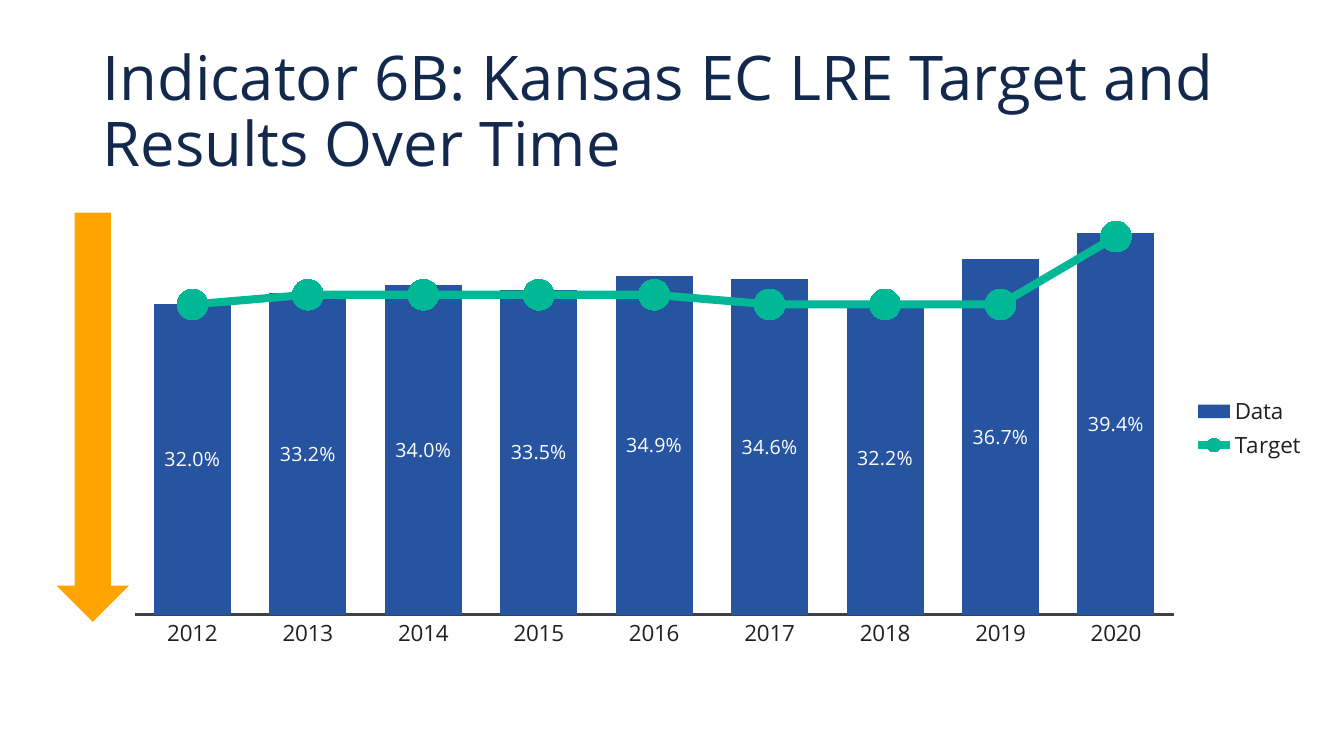
from lxml import etree
from pptx import Presentation
from pptx.chart.data import CategoryChartData
from pptx.dml.color import RGBColor
from pptx.enum.chart import (XL_CHART_TYPE, XL_LABEL_POSITION, XL_LEGEND_POSITION,
                             XL_MARKER_STYLE, XL_TICK_LABEL_POSITION, XL_TICK_MARK)
from pptx.enum.shapes import MSO_SHAPE
from pptx.enum.text import MSO_ANCHOR, PP_ALIGN
from pptx.oxml import parse_xml
from pptx.oxml.ns import nsdecls, qn
from pptx.util import Pt

NAVY = RGBColor(0x12, 0x28, 0x4C)
BLUE = RGBColor(0x26, 0x54, 0xA0)
GREEN = RGBColor(0x00, 0xB7, 0x96)
ORANGE = RGBColor(0xFF, 0xA4, 0x00)
INK = RGBColor(0x1F, 0x20, 0x22)
AXIS_GREY = RGBColor(0x3E, 0x40, 0x43)
WHITE = RGBColor(0xFF, 0xFF, 0xFF)


def format_font(font, size, color):
    font.name = "Open Sans"
    font.size = Pt(size)
    font.bold = False
    font.color.rgb = color


def write_text(frame, text, size, color, align=PP_ALIGN.LEFT,
               anchor=MSO_ANCHOR.MIDDLE, line_spacing=1.0):
    frame.word_wrap = True
    frame.vertical_anchor = anchor
    paragraph = frame.paragraphs[0]
    paragraph.alignment = align
    paragraph.line_spacing = line_spacing
    run = paragraph.add_run()
    run.text = text
    format_font(run.font, size, color)


prs = Presentation()
prs.slide_width, prs.slide_height = Pt(960), Pt(540)
slide = prs.slides.add_slide(prs.slide_layouts[5])

# Title
title = slide.shapes.title
title.left, title.top, title.width, title.height = Pt(66), Pt(28.75), Pt(828), Pt(104.4)
write_text(title.text_frame, "Indicator 6B: Kansas EC LRE Target and Results Over Time",
           size=44, color=NAVY, line_spacing=0.9)

# Chart data
results = CategoryChartData(number_format="0.0%")
results.categories = [str(year) for year in range(2012, 2021)]
results.add_series("Data", [0.32, 0.332, 0.34, 0.335, 0.349, 0.346, 0.322, 0.367, 0.394])
results.add_series("Target", [0.32, 0.33, 0.33, 0.33, 0.33, 0.32, 0.32, 0.32, 0.39])
chart = slide.shapes.add_chart(XL_CHART_TYPE.COLUMN_CLUSTERED, Pt(84.25), Pt(127.45),
                               Pt(856), Pt(357), results).chart
chart.has_title = False
format_font(chart.font, 10, NAVY)

# Yearly results as columns
columns = chart.plots[0]
columns.gap_width = 50
columns.overlap = -27
columns.vary_by_categories = False
data_series = columns.series[0]
data_series.format.fill.solid()
data_series.format.fill.fore_color.rgb = BLUE
labels = data_series.data_labels
labels.show_value = True
labels.position = XL_LABEL_POSITION.CENTER
labels.number_format = "0.0%"
labels.number_format_is_linked = False
format_font(labels.font, 14, WHITE)

# Move the target series into a line plot on the same axes
bar_chart = chart.plots[0].series[1]._element.getparent()
target_ser = bar_chart.findall(qn("c:ser"))[1]
invert = target_ser.find(qn("c:invertIfNegative"))
if invert is not None:
    target_ser.remove(invert)
line_chart = parse_xml(f'<c:lineChart {nsdecls("c")}><c:grouping val="standard"/>'
                       '<c:varyColors val="0"/></c:lineChart>')
line_chart.append(target_ser)
etree.SubElement(line_chart, qn("c:marker")).set("val", "1")
for axis_id in bar_chart.findall(qn("c:axId")):
    etree.SubElement(line_chart, qn("c:axId")).set("val", axis_id.get("val"))
bar_chart.addnext(line_chart)

target = chart.plots[1].series[0]
target.smooth = False
target.format.line.color.rgb = GREEN
target.format.line.width = Pt(5.75)
target.marker.style = XL_MARKER_STYLE.CIRCLE
target.marker.size = 22
target.marker.format.fill.solid()
target.marker.format.fill.fore_color.rgb = GREEN
target.marker.format.line.color.rgb = GREEN

# Axes
years = chart.category_axis
years.major_tick_mark = years.minor_tick_mark = XL_TICK_MARK.NONE
years.format.line.color.rgb = AXIS_GREY
years.format.line.width = Pt(2.25)
format_font(years.tick_labels.font, 16, INK)

percent = chart.value_axis
percent.minimum_scale, percent.maximum_scale = 0, 0.45
percent.has_major_gridlines = False
percent.major_tick_mark = percent.minor_tick_mark = XL_TICK_MARK.NONE
percent.tick_label_position = XL_TICK_LABEL_POSITION.NONE
percent.format.line.fill.background()

# Legend and plot area
chart.has_legend = True
chart.legend.position = XL_LEGEND_POSITION.RIGHT
chart.legend.include_in_layout = False
format_font(chart.legend.font, 16, INK)

plot_area = bar_chart.getparent()
for auto_layout in plot_area.findall(qn("c:layout")):
    plot_area.remove(auto_layout)
plot_area.insert(0, parse_xml(
    f'<c:layout {nsdecls("c")}><c:manualLayout><c:layoutTarget val="inner"/>'
    '<c:xMode val="edge"/><c:yMode val="edge"/><c:x val="0.014"/><c:y val="0"/>'
    '<c:w val="0.867"/><c:h val="0.873"/></c:manualLayout></c:layout>'))

# Direction arrow
direction = slide.shapes.add_shape(MSO_SHAPE.DOWN_ARROW, Pt(40.3), Pt(151.9), Pt(51.85), Pt(292.3))
direction.shadow.inherit = False
direction.fill.solid()
direction.fill.fore_color.rgb = ORANGE
direction.line.fill.background()

prs.save("out.pptx")
